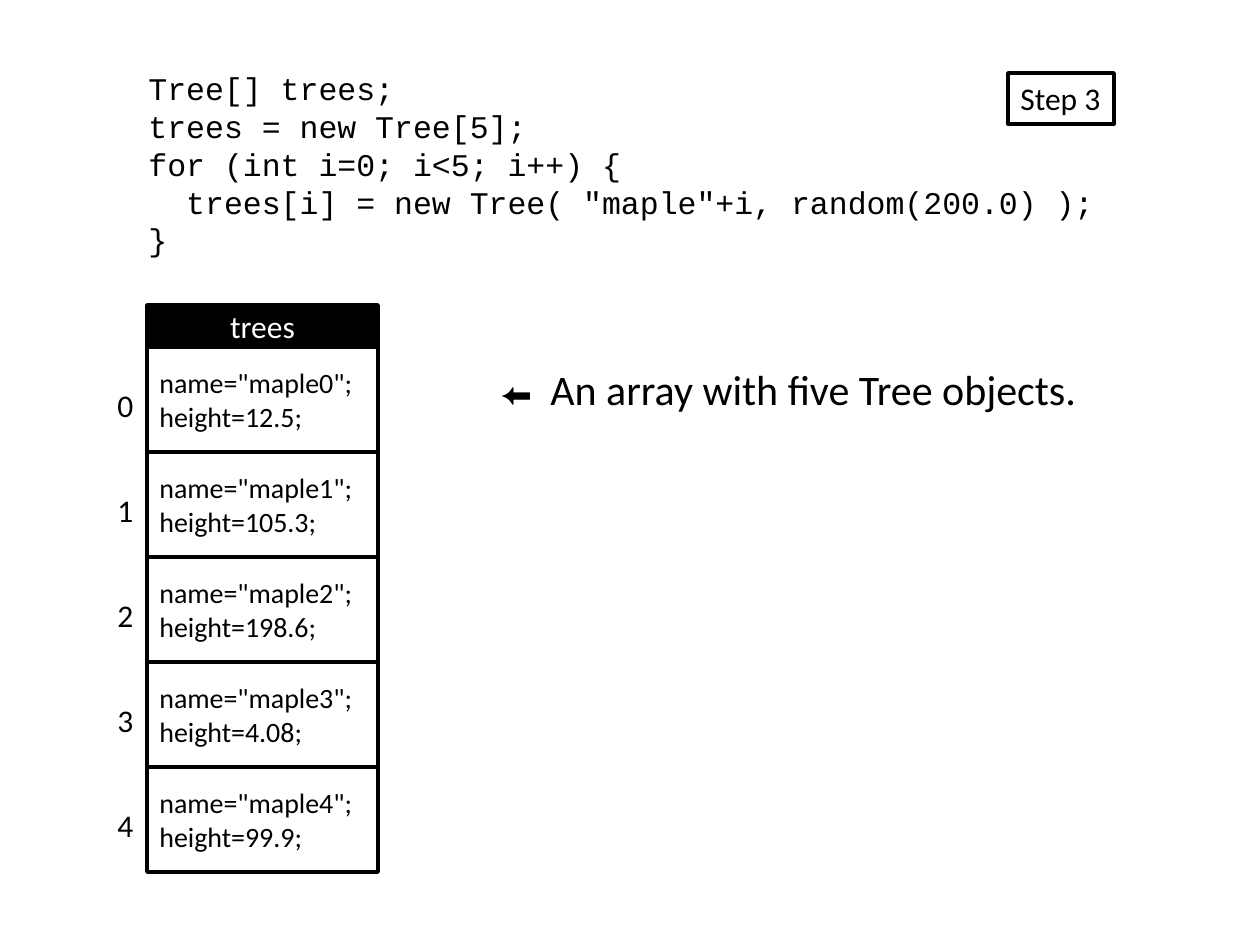
from dataclasses import dataclass

import pptx
import pptx.dml.color
import pptx.enum.shapes
import pptx.enum.text
import pptx.util
from lxml import etree

PX_PER_INCH = 126
COLORS = {"ink": "000000", "paper": "FFFFFF"}
ALIGN = pptx.enum.text.PP_ALIGN
ANCHOR = pptx.enum.text.MSO_ANCHOR


@dataclass(frozen=True)
class Box:
    left: int
    top: int
    width: int
    height: int


@dataclass(frozen=True)
class TextStyle:
    size: int = 18
    font: str = "Calibri"
    color: str = "ink"
    align: ALIGN = ALIGN.LEFT
    anchor: ANCHOR = ANCHOR.TOP
    fit: bool = False


@dataclass(frozen=True)
class Tree:
    name: str
    height: str


def px(value: int) -> pptx.util.Emu:
    return pptx.util.Emu(round(value * 914400 / PX_PER_INCH))


def rgb(name: str) -> pptx.dml.color.RGBColor:
    return pptx.dml.color.RGBColor.from_string(COLORS[name])


def place(box: Box) -> tuple:
    return px(box.left), px(box.top), px(box.width), px(box.height)


def format_run(run, style: TextStyle) -> None:
    run.font.size = pptx.util.Pt(style.size)
    run.font.name = style.font
    run.font.color.rgb = rgb(style.color)


def write(shape, text: str, style: TextStyle) -> None:
    frame = shape.text_frame
    frame.text = text
    frame.word_wrap = not style.fit
    frame.vertical_anchor = style.anchor
    if style.fit:
        frame.auto_size = pptx.enum.text.MSO_AUTO_SIZE.SHAPE_TO_FIT_TEXT
    for paragraph in frame.paragraphs:
        paragraph.alignment = style.align
        for run in paragraph.runs:
            format_run(run, style)


def add_text(slide, box: Box, text: str, style: TextStyle):
    shape = slide.shapes.add_textbox(*place(box))
    write(shape, text, style)
    return shape


def add_cell(slide, box: Box, text: str, style: TextStyle, fill: str = "paper") -> None:
    shape = slide.shapes.add_shape(
        pptx.enum.shapes.MSO_SHAPE.RECTANGLE, *place(box))
    shape.shadow.inherit = False
    shape.fill.solid()
    shape.fill.fore_color.rgb = rgb(fill)
    shape.line.color.rgb = rgb("ink")
    shape.line.width = pptx.util.Pt(2)
    write(shape, text, style)


def add_note(slide, box: Box, arrow: str, text: str, tab: int) -> None:
    shape = add_text(slide, box, arrow, TextStyle())
    paragraph = shape.text_frame.paragraphs[0]
    run = paragraph.add_run()
    run.text = "\t" + text
    format_run(run, TextStyle(size=24))
    # The tab stop sets the gap after the arrow
    namespace = "{http://schemas.openxmlformats.org/drawingml/2006/main}"
    properties = paragraph._p.get_or_add_pPr()
    stops = etree.SubElement(properties, namespace + "tabLst")
    etree.SubElement(stops, namespace + "tab", pos=str(px(tab)), algn="l")


CODE = """Tree[] trees;
trees = new Tree[5];
for (int i=0; i<5; i++) {
  trees[i] = new Tree( "maple"+i, random(200.0) );
}"""

TREES = [
    Tree("maple0", "12.5"),
    Tree("maple1", "105.3"),
    Tree("maple2", "198.6"),
    Tree("maple3", "4.08"),
    Tree("maple4", "99.9"),
]

LABEL = TextStyle(fit=True)
OBJECT = TextStyle(size=16, anchor=ANCHOR.MIDDLE)
HEADER = TextStyle(color="paper", align=ALIGN.CENTER, anchor=ANCHOR.MIDDLE)

ARRAY_LEFT, ARRAY_WIDTH = 147, 231
HEADER_TOP, HEADER_HEIGHT = 305, 42
CELL_HEIGHT = 105
INDEX_LEFT, INDEX_WIDTH, INDEX_HEIGHT, INDEX_DROP = 105, 42, 51, 33


def main() -> None:
    presentation = pptx.Presentation()
    presentation.slide_width = px(1260)
    presentation.slide_height = px(945)
    slide = presentation.slides.add_slide(presentation.slide_layouts[6])

    # Code and step label
    add_text(slide, Box(136, 63, 975, 204), CODE,
             TextStyle(font="Courier New", fit=True))
    add_cell(slide, Box(1008, 73, 106, 51), "Step 3", LABEL)

    # Array: cells with their indices, then the header
    for index, tree in enumerate(TREES):
        top = HEADER_TOP + HEADER_HEIGHT + index * CELL_HEIGHT
        add_cell(slide, Box(ARRAY_LEFT, top, ARRAY_WIDTH, CELL_HEIGHT),
                 f'name="{tree.name}";\nheight={tree.height};', OBJECT)
        add_text(slide,
                 Box(INDEX_LEFT, top + INDEX_DROP, INDEX_WIDTH, INDEX_HEIGHT),
                 str(index), LABEL)
    add_cell(slide, Box(ARRAY_LEFT, HEADER_TOP, ARRAY_WIDTH, HEADER_HEIGHT),
             "trees", HEADER, fill="ink")

    # Explanation
    add_note(slide, Box(488, 357, 610, 63), "⬅",
             "An array with five Tree objects.", tab=50)

    presentation.save("out.pptx")


if __name__ == "__main__":
    main()
